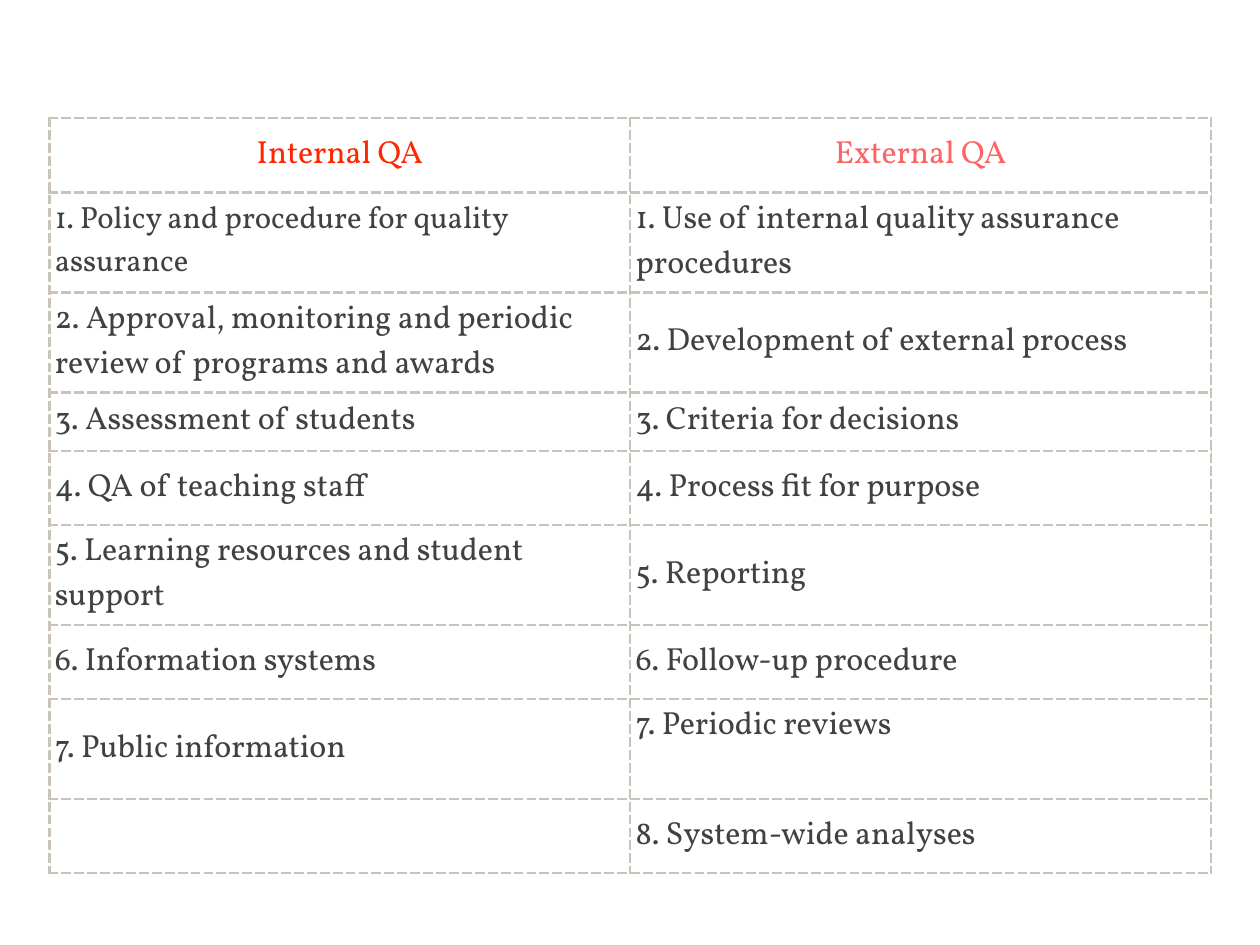
from lxml.etree import SubElement
from pptx import Presentation
from pptx.dml.color import RGBColor
from pptx.enum.text import MSO_ANCHOR, PP_ALIGN
from pptx.oxml.ns import qn
from pptx.util import Cm, Pt

COLORS = {"internal": "FF2600", "external": "FC6464", "text": "414141", "rule": "C9C3BA"}
FONT = "Vollkorn"
ONE_LINE, TWO_LINES, TIGHT = 2.13, 2.86, 1.67

HEADINGS = [("Internal QA", "internal"), ("External QA", "external")]
ROWS = [
    (TWO_LINES, "1. Policy and procedure for quality assurance",
     "1. Use of internal quality assurance procedures"),
    (TWO_LINES, "2. Approval, monitoring and periodic review of programs and awards",
     "2. Development of external process"),
    (TIGHT, "3. Assessment of students", "3. Criteria for decisions"),
    (ONE_LINE, "4. QA of teaching staff", "4. Process fit for purpose"),
    (TWO_LINES, "5. Learning resources and student support", "5. Reporting"),
    (ONE_LINE, "6. Information systems", "6. Follow-up procedure"),
    (TWO_LINES, "7. Public information", "7. Periodic reviews"),
    (ONE_LINE, "", "8. System-wide analyses"),
]


def add_dashed_borders(cell):
    tcPr = cell._tc.get_or_add_tcPr()
    for side in ("lnL", "lnR", "lnT", "lnB"):
        ln = SubElement(tcPr, qn(f"a:{side}"), w=str(Pt(2)))
        fill = SubElement(ln, qn("a:solidFill"))
        SubElement(fill, qn("a:srgbClr"), val=COLORS["rule"])
        SubElement(ln, qn("a:prstDash"), val="dash")


def fill_cell(cell, text, color="text", align=PP_ALIGN.LEFT, size=26):
    add_dashed_borders(cell)
    cell.fill.background()
    cell.vertical_anchor = MSO_ANCHOR.MIDDLE
    cell.margin_left = cell.margin_right = Cm(0.15)
    cell.margin_top = cell.margin_bottom = Cm(0.15)
    p = cell.text_frame.paragraphs[0]
    p.text = text
    p.alignment = align
    p.font.name = FONT
    p.font.size = Pt(size)
    p.font.bold = False
    p.font.color.rgb = RGBColor.from_string(COLORS[color])


def add_qa_table(slide, left, top, width):
    heights = [ONE_LINE] + [row[0] for row in ROWS]
    frame = slide.shapes.add_table(len(heights), len(HEADINGS), Cm(left), Cm(top),
                                   Cm(width), Cm(sum(heights)))
    table = frame.table
    table.first_row = table.horz_banding = False
    for row, height in zip(table.rows, heights):
        row.height = Cm(height)
    for col, (heading, color) in enumerate(HEADINGS):
        fill_cell(table.cell(0, col), heading, color, PP_ALIGN.CENTER)
    for i, (_, *texts) in enumerate(ROWS, start=1):
        for col, text in enumerate(texts):
            fill_cell(table.cell(i, col), text, size=25 if (i, col) == (1, 0) else 26)
    table.cell(7, 1).vertical_anchor = MSO_ANCHOR.TOP


def main():
    prs = Presentation()
    prs.slide_width, prs.slide_height = Cm(36.12), Cm(27.1)
    slide = prs.slides.add_slide(prs.slide_layouts[6])
    add_qa_table(slide, 1.42, 3.39, 33.3)
    prs.save("out.pptx")


if __name__ == "__main__":
    main()
